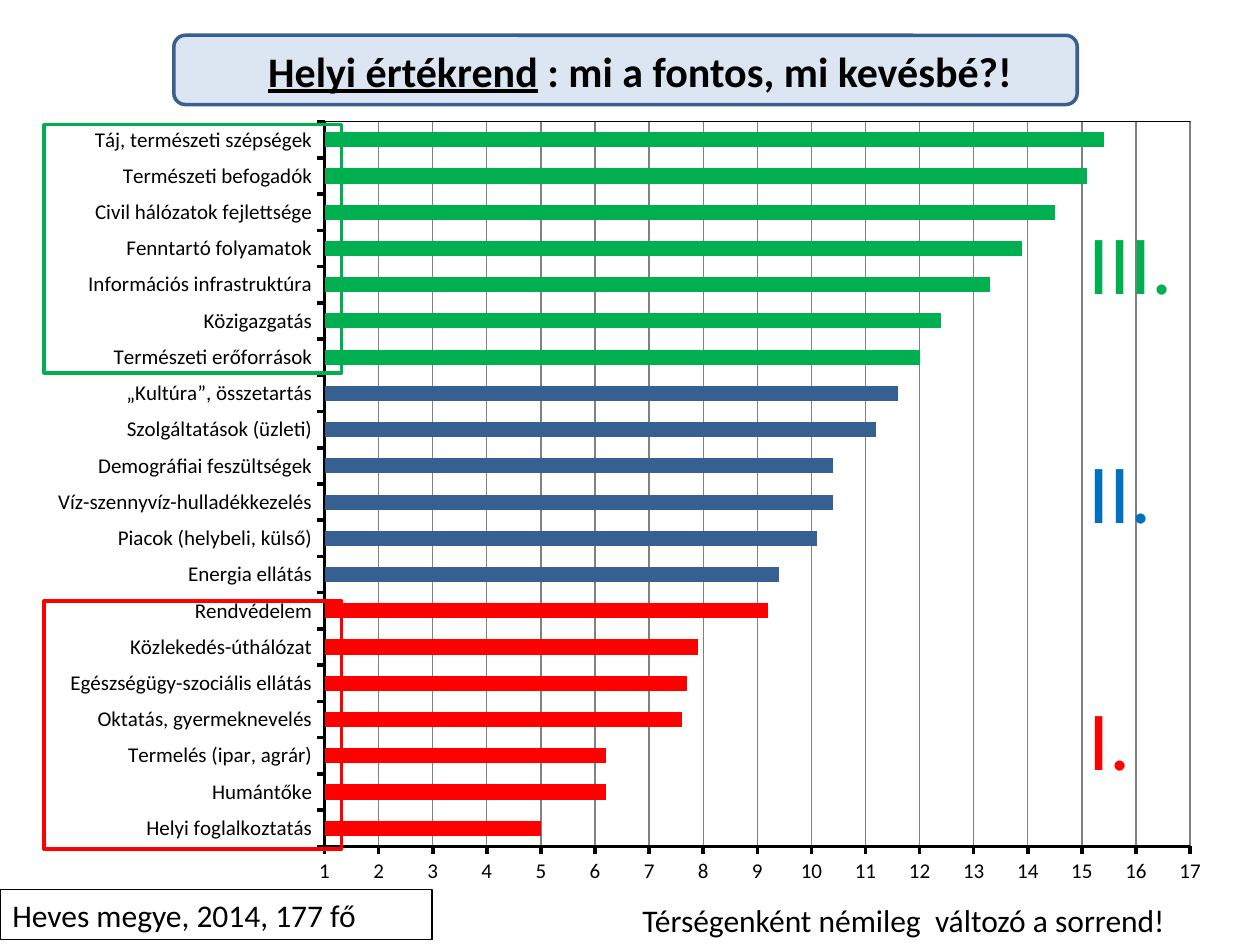
from pptx import Presentation, util as u
from pptx.chart.data import CategoryChartData
from pptx.dml.color import RGBColor
from pptx.enum import chart as ch, shapes, text
from pptx.oxml import parse_xml
from pptx.oxml.ns import nsdecls

Inches, Pt = u.Inches, u.Pt
FONT = "Calibri"
COLORS = {
    "black": "000000", "grid": "808080", "title_fill": "DCE6F2", "title_line": "3A5F8C",
    "red": "FF0000", "blue": "376092", "green": "00B050", "numeral_blue": "0070C0",
}

# Rank of each local value, from the bottom bar upwards, by importance group
GROUPS = [
    ("red", [("Helyi foglalkoztatás", 5), ("Humántőke", 6.2), ("Termelés (ipar, agrár)", 6.2),
             ("Oktatás, gyermeknevelés", 7.6), ("Egészségügy-szociális ellátás", 7.7),
             ("Közlekedés-úthálózat", 7.9), ("Rendvédelem", 9.2)]),
    ("blue", [("Energia ellátás", 9.4), ("Piacok (helybeli, külső)", 10.1),
              ("Víz-szennyvíz-hulladékkezelés", 10.4), ("Demográfiai feszültségek", 10.4),
              ("Szolgáltatások (üzleti)", 11.2), ("„Kultúra”, összetartás", 11.6)]),
    ("green", [("Természeti erőforrások", 12), ("Közigazgatás", 12.4),
               ("Információs infrastruktúra", 13.3), ("Fenntartó folyamatok", 13.9),
               ("Civil hálózatok fejlettsége", 14.5), ("Természeti befogadók", 15.1),
               ("Táj, természeti szépségek", 15.4)]),
]


def rgb(name):
    return RGBColor.from_string(COLORS[name])


def box(at):
    return [Inches(v) for v in at]


def add_box(s, at, line, width, fill=None, kind=shapes.MSO_SHAPE.RECTANGLE):
    sp = s.shapes.add_shape(kind, *box(at))
    sp.shadow.inherit = False
    if fill:
        sp.fill.solid()
        sp.fill.fore_color.rgb = rgb(fill)
    else:
        sp.fill.background()
    sp.line.color.rgb = rgb(line)
    sp.line.width = Pt(width)
    return sp


def write(sp, runs, size, color="black", align=text.PP_ALIGN.LEFT, bold=False):
    tf = sp.text_frame
    tf.word_wrap = True
    tf.vertical_anchor = text.MSO_ANCHOR.TOP
    p = tf.paragraphs[0]
    p.alignment = align
    for words, underline in runs:
        r = p.add_run()
        r.text = words
        r.font.name, r.font.size = FONT, Pt(size)
        r.font.bold, r.font.underline = bold, underline
        r.font.color.rgb = rgb(color)


def add_text(s, at, runs, size, **style):
    write(s.shapes.add_textbox(*box(at)), runs, size, **style)


def style_axis(axis):
    axis.major_tick_mark = ch.XL_TICK_MARK.OUTSIDE
    axis.minor_tick_mark = ch.XL_TICK_MARK.NONE
    axis.format.line.color.rgb = rgb("black")
    axis.format.line.width = Pt(2)
    axis.tick_labels.font.size = Pt(12)


def style_plot_area(chart):
    """Fix the inner plot rectangle and give it a thin border."""
    area = chart._chartSpace.chart.plotArea
    for old in area.xpath("c:layout"):
        area.remove(old)
    places = "".join(f'<c:{tag} val="{val}"/>' for tag, val in [
        ("layoutTarget", "inner"), ("xMode", "edge"), ("yMode", "edge"),
        ("x", 0.243), ("y", 0.02), ("w", 0.727), ("h", 0.913)])
    area.insert(0, parse_xml(
        f'<c:layout {nsdecls("c")}><c:manualLayout>{places}</c:manualLayout></c:layout>'))
    area.append(parse_xml(
        f'<c:spPr {nsdecls("c", "a")}><a:noFill/><a:ln w="9525"><a:solidFill>'
        f'<a:srgbClr val="{COLORS["black"]}"/></a:solidFill></a:ln></c:spPr>'))


def add_ranking(s, at):
    bars = [(color, *item) for color, items in GROUPS for item in items]
    data = CategoryChartData(number_format="0.0")
    data.categories = [name for _, name, _ in bars]
    data.add_series("Series 1", [value for _, _, value in bars])
    chart = s.shapes.add_chart(ch.XL_CHART_TYPE.BAR_CLUSTERED, *box(at), data).chart
    chart.has_legend = chart.has_title = False
    chart.font.name, chart.font.size = FONT, Pt(10)
    chart.font.color.rgb = rgb("black")

    plot = chart.plots[0]
    plot.vary_by_categories = False
    plot.gap_width = 140
    series = plot.series[0]
    series.format.fill.solid()
    series.format.fill.fore_color.rgb = rgb("red")
    for i, (color, _, _) in enumerate(bars):
        if color != "red":
            fill = series.points[i].format.fill
            fill.solid()
            fill.fore_color.rgb = rgb(color)

    style_axis(chart.category_axis)
    axis = chart.value_axis
    style_axis(axis)
    axis.minimum_scale, axis.maximum_scale, axis.major_unit = 1, 17, 1
    axis.tick_labels.number_format = "0"
    axis.tick_labels.number_format_is_linked = False
    axis.has_major_gridlines = True
    axis.major_gridlines.format.line.color.rgb = rgb("grid")
    axis.major_gridlines.format.line.width = Pt(0.75)
    style_plot_area(chart)


def main():
    prs = Presentation()
    prs.slide_width, prs.slide_height = Inches(10), Inches(7.5)
    s = prs.slides.add_slide(prs.slide_layouts[6])

    # Title panel, chart and title
    add_box(s, (1.38, 0.28, 7.17, 0.55), "title_line", 2, "title_fill",
            shapes.MSO_SHAPE.ROUNDED_RECTANGLE)
    add_ranking(s, (0.28, 0.84, 9.45, 6.3))
    add_text(s, (0.59, 0.31, 8.98, 0.5),
             [("Helyi értékrend", True), (" : mi a fontos, mi kevésbé?!", False)],
             24, align=text.PP_ALIGN.CENTER, bold=True)

    # Group numerals
    for numeral, top, width, color in [("I.", 5.4, 0.63, "red"),
                                       ("II.", 3.44, 0.79, "numeral_blue"),
                                       ("III.", 1.62, 0.94, "green")]:
        add_text(s, (8.54, top, width, 0.91), [(numeral, False)], 48, color=color)

    # Sample note
    note = add_box(s, (0, 7.06, 3.43, 0.4), "black", 0.75)
    write(note, [("Heves megye, 2014, 177 fő", False)], 18)

    # Frames around the top and bottom groups
    for top, color in [(0.99, "green"), (4.77, "red")]:
        add_box(s, (0.35, top, 2.36, 1.97), color, 2)

    # Closing remark
    add_text(s, (5, 7.1, 4.49, 0.4), [("Térségenként némileg  változó a sorrend!", False)], 18)

    prs.save("out.pptx")


if __name__ == "__main__":
    main()
